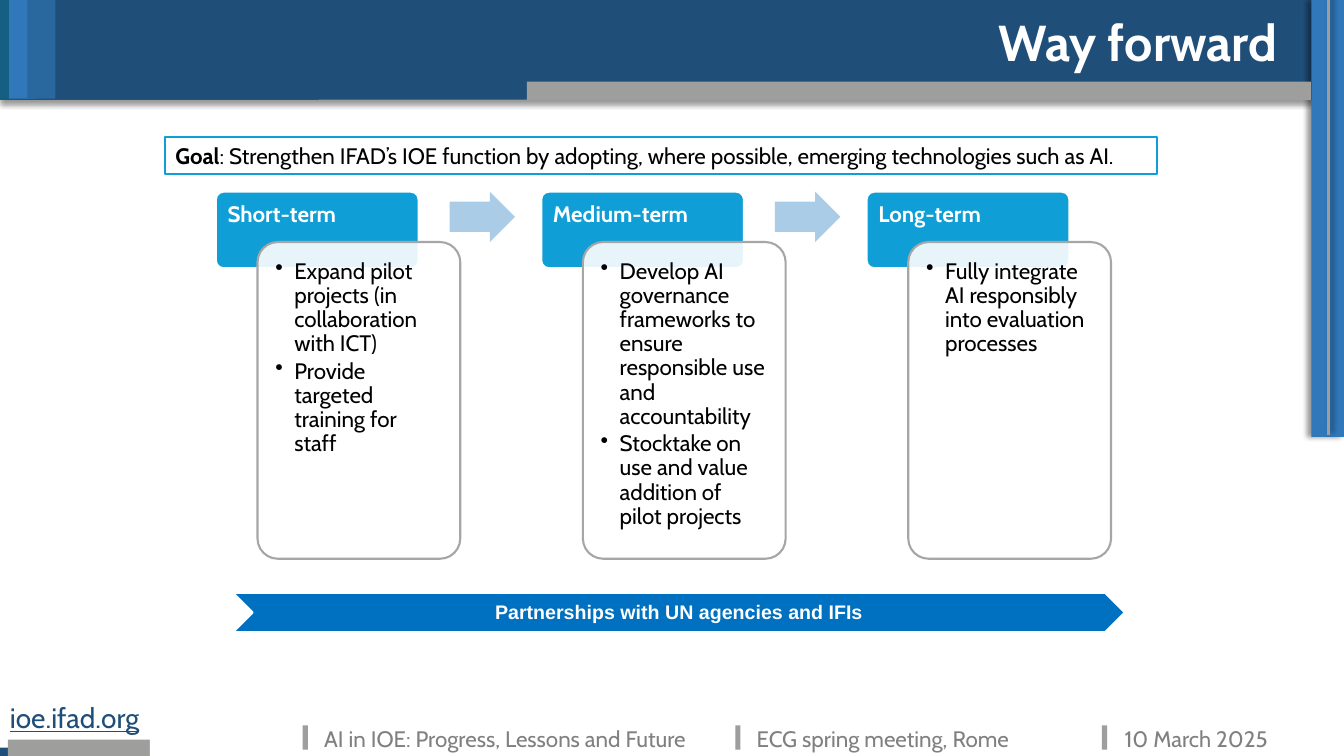
from lxml import etree
from pptx import Presentation
from pptx import util as u
from pptx.dml.color import RGBColor
from pptx.enum import shapes, text
from pptx.oxml import ns

HUES = {
    "navy": "1F4E79", "blue": "3078BA", "mid": "29679F", "teal": "156082",
    "sky": "0F9ED5", "pale": "ABCCE7", "deep": "0070C0", "white": "FFFFFF",
    "black": "000000", "grey": "9E9E9D", "edge": "A6A6A6", "foot": "808080",
}
KIND = shapes.MSO_SHAPE
TOP = text.MSO_ANCHOR.TOP
MID = text.MSO_ANCHOR.MIDDLE
LEFT = text.PP_ALIGN.LEFT
CENTER = text.PP_ALIGN.CENTER


def hue(name):
    return RGBColor.from_string(HUES[name])


def add(parent, tag, **attrs):
    return etree.SubElement(parent, ns.qn(tag), attrs)


class Deck:
    font = "Cabin"
    inset = (0.25, 0.13, 0.25, 0.13)

    def __init__(self, wide, high):
        self.prs = Presentation()
        self.prs.slide_width, self.prs.slide_height = u.Cm(wide), u.Cm(high)
        self.slide = self.prs.slides.add_slide(self.prs.slide_layouts[6])

    def shade(self, item, angle):
        props = item._element.spPr
        for old in props.findall(ns.qn("a:effectLst")):
            props.remove(old)
        effect = add(props, "a:effectLst")
        outer = add(effect, "a:outerShdw", blurRad=str(u.Pt(4)),
                    dist=str(u.Pt(3)), dir=str(angle * 60000),
                    algn="ctr", rotWithShape="0")
        tint = add(outer, "a:srgbClr", val=HUES["black"])
        add(tint, "a:alpha", val="40000")

    def shape(self, kind, box, fill, line=None, adj=(), alpha=None, shadow=None):
        item = self.slide.shapes.add_shape(kind, *map(u.Cm, box))
        for i, value in enumerate(adj):
            item.adjustments[i] = value
        item.fill.solid()
        item.fill.fore_color.rgb = hue(fill)
        if alpha is not None:
            tint = item._element.spPr.find(ns.qn("a:solidFill"))[0]
            add(tint, "a:alpha", val=str(alpha * 1000))
        if line:
            item.line.color.rgb = hue(line)
            item.line.width = u.Pt(1.5)
        else:
            item.line.fill.background()
        item.shadow.inherit = False
        if shadow is not None:
            self.shade(item, shadow)
        return item

    def rect(self, box, fill, **style):
        return self.shape(KIND.RECTANGLE, box, fill, **style)

    def line(self, ends, color, width, shadow):
        item = self.slide.shapes.add_connector(
            shapes.MSO_CONNECTOR.STRAIGHT, *map(u.Cm, ends))
        item.line.color.rgb = hue(color)
        item.line.width = u.Pt(width)
        self.shade(item, shadow)

    def put(self, item, lines, size, color, inset=inset, anchor=TOP,
            align=LEFT, bold=False, font=font, lead=None, after=0,
            bullet=False, wrap=True):
        frame = item.text_frame
        frame.word_wrap = wrap
        frame.vertical_anchor = anchor
        (frame.margin_left, frame.margin_top,
         frame.margin_right, frame.margin_bottom) = map(u.Cm, inset)
        for i, words in enumerate(lines):
            para = frame.add_paragraph() if i else frame.paragraphs[0]
            para.text = words
            para.alignment = align
            para.line_spacing = lead
            para.space_after = u.Pt(after)
            if bullet:
                props = para._p.get_or_add_pPr()
                props.set("marL", str(u.Cm(0.48)))
                props.set("indent", str(-u.Cm(0.48)))
                add(props, "a:buChar", char="•")
            para.font.name = font
            para.font.size = u.Pt(size)
            para.font.bold = bold
            para.font.color.rgb = hue(color)
        return frame

    def label(self, box, words, size, color, **style):
        item = self.slide.shapes.add_textbox(*map(u.Cm, box))
        return self.put(item, [words], size, color, **style)

    def step(self, left, title, points):
        top = 4.83
        head = self.shape(KIND.ROUNDED_RECTANGLE, (left, top, 5.11, 1.93),
                          "sky", line="white", adj=[0.1])
        self.put(head, [title], 16, "white", inset=(0.24, 0.24, 0.24, 0.18),
                 bold=True, lead=0.9, after=5.6)
        body = self.shape(KIND.ROUNDED_RECTANGLE,
                          (left + 1.05, top + 1.27, 5.11, 7.98),
                          "white", line="edge", adj=[0.1], alpha=90)
        self.put(body, points, 16, "black", inset=(0.3,) * 4,
                 lead=0.9, after=2.4, bullet=True)

    def arrow(self, left):
        self.shape(KIND.RIGHT_ARROW, (left, 4.83, 1.65, 1.27), "pale",
                   adj=[0.6, 0.5])


STEPS = [
    ("Short-term", ["Expand pilot projects (in collaboration with ICT)",
                    "Provide targeted training for staff"]),
    ("Medium-term", ["Develop AI governance frameworks to ensure responsible "
                     "use and accountability",
                     "Stocktake on use and value addition of pilot projects"]),
    ("Long-term", ["Fully integrate AI responsibly into evaluation processes"]),
]
FOOT = [
    (7.63, 7.92, 10.21, "AI in IOE: Progress, Lessons and Future"),
    (18.53, 18.82, 8.18, "ECG spring meeting, Rome"),
    (27.77, 28.09, 5.56, "10 March 2025"),
]


def main():
    deck = Deck(33.87, 19.05)

    deck.rect((0, 0, 8.03, 19.05), "navy")
    deck.rect((0, 2.51, 8.2, 16.33), "white")
    deck.rect((0, 0, 33.87, 2.51), "navy", shadow=90)
    deck.rect((33.05, 0, 0.82, 11.01), "blue", shadow=180)
    deck.rect((13.28, 2.06, 19.76, 0.46), "grey")
    for left, fill in ((0, "teal"), (0.23, "blue"), (0.69, "mid")):
        deck.rect((left, 0, 0.71, 2.49), fill)
    deck.line((33.48, 0, 33.48, 10.97), "grey", 2.25, shadow=315)

    deck.rect((0.2, 18.64, 3.78, 0.41), "grey")
    deck.rect((3.78, 18.42, 4.34, 0.63), "white")
    for tick, left, wide, words in FOOT:
        deck.rect((tick, 18.28, 0.13, 0.61), "grey")
        deck.label((left, 18.14, wide, 0.86), words, 16, "foot")
    site = deck.label((0, 17.53, 4.34, 1.19), "ioe.ifad.org", 20, "navy")
    site.paragraphs[0].font.underline = True

    for i, (title, points) in enumerate(STEPS):
        left = 5.44 + 8.2 * i
        deck.step(left, title, points)
        if i < len(STEPS) - 1:
            deck.arrow(left + 5.89)

    deck.label((24.92, 0.15, 7.77, 1.8), "Way forward", 36, "white",
               bold=True, wrap=False)

    deck.shape(KIND.CHEVRON, (5.87, 14.94, 22.48, 0.99), "deep", line="white")
    band = deck.rect((6.4, 15.19, 21.31, 0.51), "deep")
    deck.put(band, ["Partnerships with UN agencies and IFIs"], 14, "white",
             inset=(0.2, 0.08, 0.08, 0.08), anchor=MID, align=CENTER,
             bold=True, font="Arial", lead=0.9, after=4.9)

    goal = deck.rect((4.17, 3.45, 24.99, 0.94), "white", line="sky")
    frame = deck.put(goal, ["Goal"], 16, "black")
    frame.paragraphs[0].runs[0].font.bold = True
    rest = frame.paragraphs[0].add_run()
    rest.text = (": Strengthen IFAD’s IOE function by adopting, where possible, "
                 "emerging technologies such as AI.")

    deck.prs.save("out.pptx")


if __name__ == "__main__":
    main()
